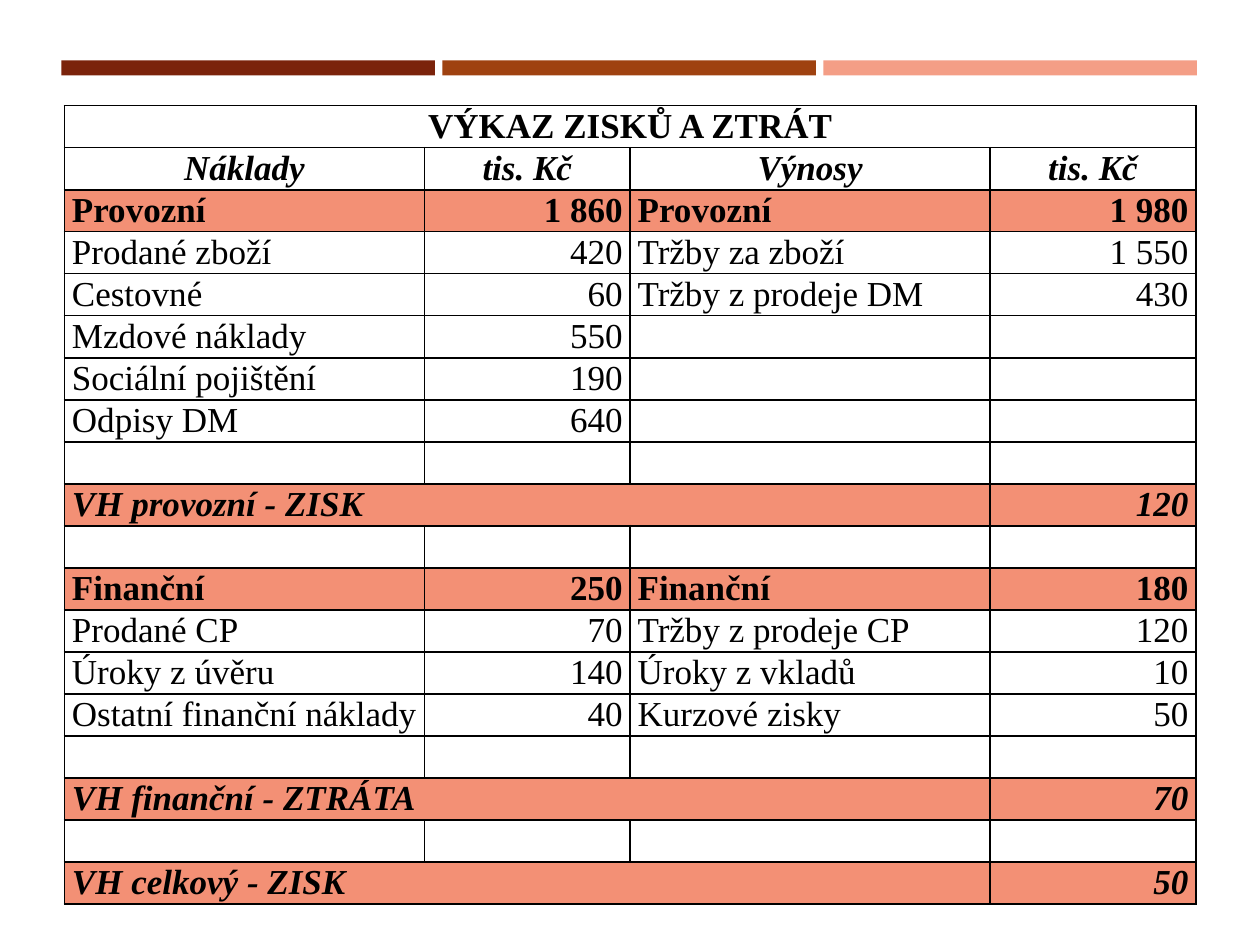
import pptx
import pptx.dml.color
import pptx.enum.shapes
import pptx.enum.text
import pptx.oxml
import pptx.oxml.ns
import pptx.util

Cm = pptx.util.Cm
Pt = pptx.util.Pt
Align = pptx.enum.text.PP_ALIGN

FONT = "Times New Roman"
INK = "000000"
BAND = "F39075"
BARS = ["7B230B", "9F4210", "F49E86"]

ROWS = [
    ("title", "VÝKAZ ZISKŮ A ZTRÁT", "", "", ""),
    ("head", "Náklady", "tis. Kč", "Výnosy", "tis. Kč"),
    ("group", "Provozní", "1 860", "Provozní", "1 980"),
    ("item", "Prodané zboží", "420", "Tržby za zboží", "1 550"),
    ("item", "Cestovné", "60", "Tržby z prodeje DM", "430"),
    ("item", "Mzdové náklady", "550", "", ""),
    ("item", "Sociální pojištění", "190", "", ""),
    ("item", "Odpisy DM", "640", "", ""),
    ("item", "", "", "", ""),
    ("total", "VH provozní - ZISK", "", "", "120"),
    ("item", "", "", "", ""),
    ("group", "Finanční", "250", "Finanční", "180"),
    ("item", "Prodané CP", "70", "Tržby z prodeje CP", "120"),
    ("item", "Úroky z úvěru", "140", "Úroky z vkladů", "10"),
    ("item", "Ostatní finanční náklady", "40", "Kurzové zisky", "50"),
    ("item", "", "", "", ""),
    ("total", "VH finanční - ZTRÁTA", "", "", "70"),
    ("item", "", "", "", ""),
    ("total", "VH celkový - ZISK", "", "", "50"),
]
SPANS = {"title": 4, "total": 3}
HEAVY = {(1, col) for col in range(4)} | {(9, col) for col in range(4)} | {(16, 3)}


def color(code):
    return pptx.dml.color.RGBColor.from_string(code)


def write(frame, text, size=20, bold=False, italic=False, align=Align.LEFT):
    para = frame.paragraphs[0]
    para.alignment = align
    run = para.add_run()
    run.text = text
    font = run.font
    font.name, font.size = FONT, Pt(size)
    font.bold, font.italic = bold, italic
    font.color.rgb = color(INK)


def rule(cell, side, width):
    space = pptx.oxml.ns.nsdecls("a")
    cell._tc.get_or_add_tcPr().append(pptx.oxml.parse_xml(
        f'<a:ln{side} {space} w="{Pt(width)}"><a:solidFill>'
        f'<a:srgbClr val="{INK}"/></a:solidFill></a:ln{side}>'))


def border(cell, row, col):
    top = 1.5 if (row - 1, col) in HEAVY else 1
    base = 1.5 if (row, col) in HEAVY else 1
    for side, width in zip("LRTB", (1, 1, top, base)):
        rule(cell, side, width)


def paint(cell, kind):
    if kind in ("group", "total"):
        cell.fill.solid()
        cell.fill.fore_color.rgb = color(BAND)
    else:
        cell.fill.background()


def add_bars(slide, left, top, width, height, gap=0.15):
    size = (width - gap * (len(BARS) - 1)) / len(BARS)
    for num, code in enumerate(BARS):
        bar = slide.shapes.add_shape(
            pptx.enum.shapes.MSO_SHAPE.RECTANGLE,
            Cm(left + num * (size + gap)), Cm(top), Cm(size), Cm(height))
        bar.shadow.inherit = False
        bar.fill.solid()
        bar.fill.fore_color.rgb = color(code)
        bar.line.fill.background()


def add_sheet(slide, left, top, width, height):
    table = slide.shapes.add_table(
        len(ROWS), 4, Cm(left), Cm(top), Cm(width), Cm(height)).table
    table.first_row = table.horz_banding = False
    for col, share in enumerate([7, 4, 7, 4]):
        table.columns[col].width = Cm(width * share / 22)
    for row, (kind, *texts) in enumerate(ROWS):
        table.rows[row].height = Cm(height / len(ROWS))
        if kind in SPANS:
            table.cell(row, 0).merge(table.cell(row, SPANS[kind] - 1))
        for col, text in enumerate(texts):
            cell = table.cell(row, col)
            cell.margin_left = cell.margin_right = Cm(0.15)
            cell.margin_top = cell.margin_bottom = 0
            cell.vertical_anchor = pptx.enum.text.MSO_ANCHOR.MIDDLE
            border(cell, row, col)
            paint(cell, kind)
            if kind in ("title", "head"):
                align = Align.CENTER
            else:
                align = Align.RIGHT if col % 2 else Align.JUSTIFY
            write(cell.text_frame, text, bold=kind != "item",
                  italic=kind in ("head", "total"), align=align)


def main():
    deck = pptx.Presentation()
    deck.slide_width, deck.slide_height = Cm(25.4), Cm(19.05)
    slide = deck.slides.add_slide(deck.slide_layouts[6])
    add_bars(slide, 1.24, 1.22, 22.89, 0.3)
    add_sheet(slide, 1.3, 2.13, 22.81, 16.1)
    deck.save("out.pptx")


if __name__ == "__main__":
    main()
